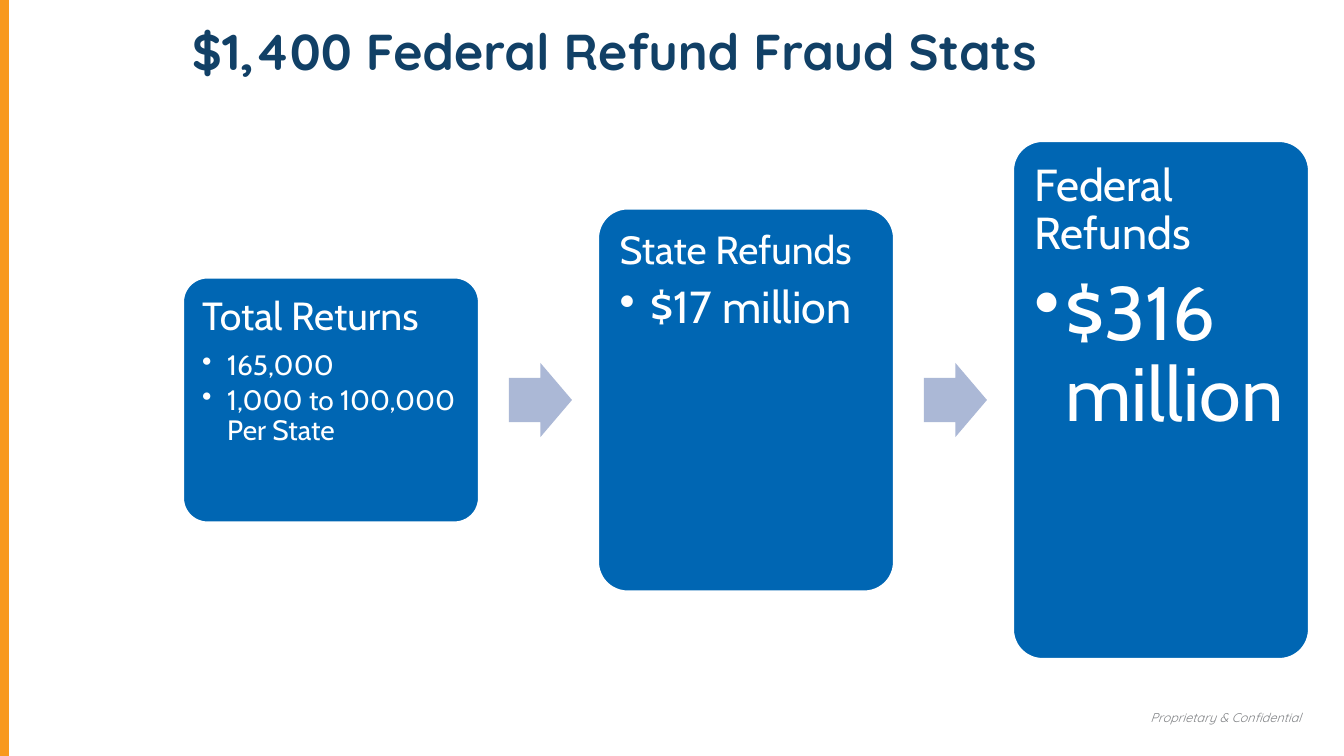
from dataclasses import dataclass

from lxml.etree import SubElement
from pptx import Presentation
from pptx.dml.color import RGBColor
from pptx.enum.shapes import MSO_CONNECTOR, MSO_SHAPE
from pptx.enum.text import MSO_ANCHOR, MSO_AUTO_SIZE, PP_ALIGN
from pptx.oxml.ns import qn
from pptx.util import Pt

TITLE = "$1,400 Federal Refund Fraud Stats"
FOOTER = "Proprietary & Confidential"
STAGES = [
    {"head": "Total Returns", "head_size": 28, "height": 245, "inset": 12, "indent": 25,
     "bullets": ["165,000", "1,000 to 100,000 Per State"], "bullet_size": 20},
    {"head": "State Refunds", "head_size": 28, "height": 383, "inset": 13, "indent": 31,
     "bullets": ["$17 million"], "bullet_size": 32},
    {"head": "Federal Refunds", "head_size": 32, "height": 518, "inset": 13, "indent": 31,
     "bullets": ["$316 million"], "bullet_size": 54},
]

PAGE_WIDTH, PAGE_HEIGHT = 1344, 756
FIRST_LEFT, PITCH, BOX_WIDTH, MIDDLE = 183, 415, 296, 400
ARROW_OFFSET, ARROW_WIDTH, ARROW_HEIGHT = 326, 63, 74
EMU_PER_PX = 12192000 / PAGE_WIDTH


@dataclass(frozen=True)
class Theme:
    navy: str = "114066"
    blue: str = "0066B3"
    arrow: str = "ABB8D6"
    orange: str = "F8991D"
    grey: str = "808285"
    white: str = "FFFFFF"
    display: str = "Quicksand"
    body: str = "Cabin"
    title_size: int = 36
    footer_size: int = 9


THEME = Theme()


def px(length):
    return round(length * EMU_PER_PX)


def write(para, text, *, size, color, font, bold=False, italic=False,
          align=PP_ALIGN.LEFT, spacing=1.0, after=0, indent=None):
    para.alignment = align
    para.line_spacing = spacing
    para.space_before = Pt(0)
    para.space_after = Pt(after)
    if indent:
        properties = para._p.get_or_add_pPr()
        properties.set("marL", str(px(indent)))
        properties.set("indent", str(-px(indent)))
        SubElement(properties, qn("a:buChar")).set("char", "•")
    span = para.add_run()
    span.text = text
    span.font.size = Pt(size)
    span.font.name = font
    span.font.bold = bold
    span.font.italic = italic
    span.font.color.rgb = RGBColor.from_string(color)


def set_frame(frame, anchor, side, end):
    frame.word_wrap = True
    frame.auto_size = MSO_AUTO_SIZE.NONE
    frame.vertical_anchor = anchor
    frame.margin_left = frame.margin_right = px(side)
    frame.margin_top = frame.margin_bottom = px(end)


def add_block(page, kind, left, width, height, fill):
    block = page.shapes.add_shape(
        kind, px(left), px(MIDDLE - height / 2), px(width), px(height))
    block.shadow.inherit = False
    block.fill.solid()
    block.fill.fore_color.rgb = RGBColor.from_string(fill)
    block.line.fill.background()
    return block


def add_stage(page, left, stage):
    box = add_block(page, MSO_SHAPE.ROUNDED_RECTANGLE, left, BOX_WIDTH,
                    stage["height"], THEME.blue)
    box.adjustments[0] = 0.1
    box.line.color.rgb = RGBColor.from_string(THEME.white)
    box.line.width = Pt(1.5)
    frame = box.text_frame
    set_frame(frame, MSO_ANCHOR.TOP, stage["inset"], stage["inset"])
    common = {"color": THEME.white, "font": THEME.body, "spacing": 0.9}
    write(frame.paragraphs[0], stage["head"], size=stage["head_size"],
          after=round(stage["head_size"] * 0.33), **common)
    for bullet in stage["bullets"]:
        write(frame.add_paragraph(), bullet, size=stage["bullet_size"],
              after=round(stage["bullet_size"] * 0.13),
              indent=stage["indent"], **common)


def add_arrow(page, left):
    arrow = add_block(page, MSO_SHAPE.RIGHT_ARROW, left, ARROW_WIDTH,
                      ARROW_HEIGHT, THEME.arrow)
    arrow.adjustments[0] = 0.6
    arrow.adjustments[1] = 0.5


def add_edge(page):
    edge = page.shapes.add_connector(
        MSO_CONNECTOR.STRAIGHT, px(3), 0, px(3), px(PAGE_HEIGHT))
    edge.line.color.rgb = RGBColor.from_string(THEME.orange)
    edge.line.width = Pt(8)
    SubElement(edge._element.spPr, qn("a:effectLst"))


def add_footer(page):
    box = page.shapes.add_textbox(px(1106), px(697), px(205), px(33))
    set_frame(box.text_frame, MSO_ANCHOR.BOTTOM, 10, 5)
    write(box.text_frame.paragraphs[0], FOOTER, size=THEME.footer_size,
          color=THEME.grey, font=THEME.display, italic=True, align=PP_ALIGN.RIGHT)


def set_title(page):
    title = page.shapes.title
    title.left, title.top, title.width, title.height = map(px, (182, 15, 1128, 101))
    set_frame(title.text_frame, MSO_ANCHOR.TOP, 10, 5)
    write(title.text_frame.paragraphs[0], TITLE, size=THEME.title_size,
          color=THEME.navy, font=THEME.display, bold=True)


def main():
    deck = Presentation()
    deck.slide_width, deck.slide_height = px(PAGE_WIDTH), px(PAGE_HEIGHT)
    page = deck.slides.add_slide(deck.slide_layouts[5])
    add_footer(page)
    add_edge(page)
    set_title(page)
    for index, stage in enumerate(STAGES):
        left = FIRST_LEFT + index * PITCH
        add_stage(page, left, stage)
        if index < len(STAGES) - 1:
            add_arrow(page, left + ARROW_OFFSET)
    deck.save("out.pptx")


if __name__ == "__main__":
    main()
